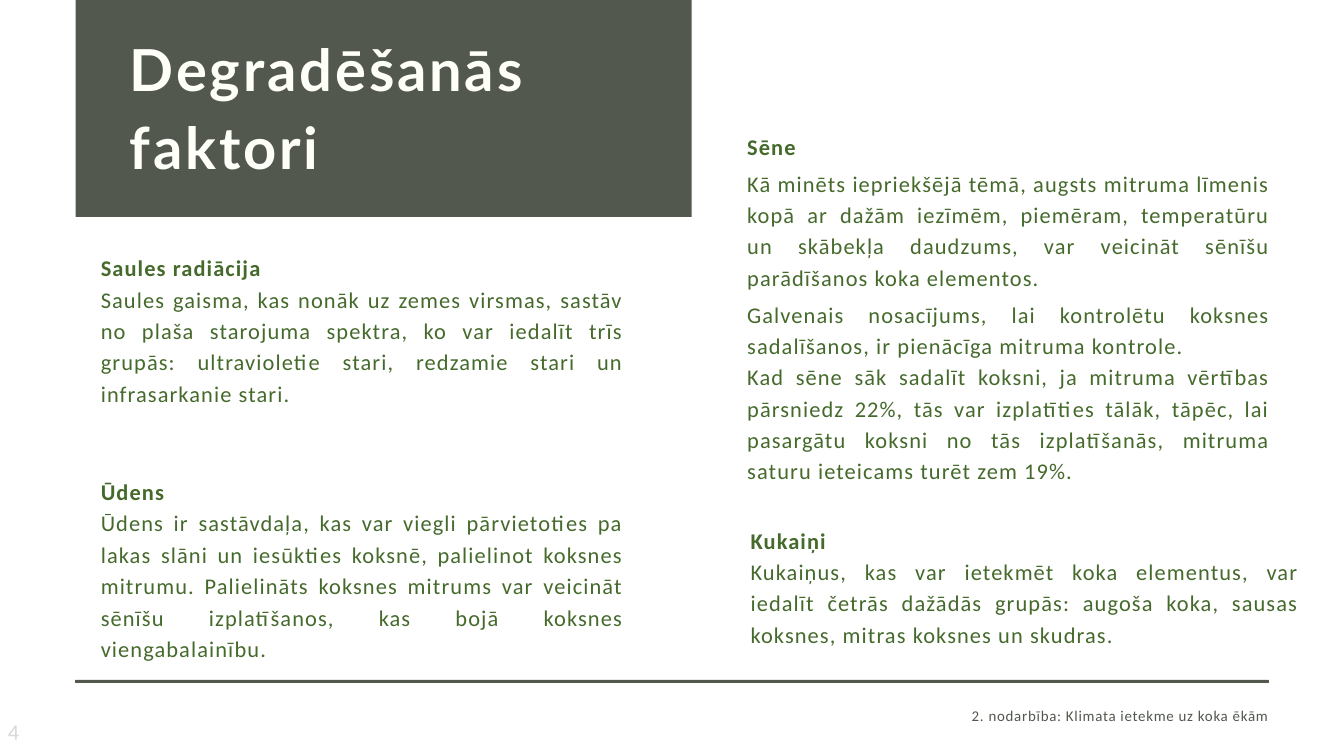
import pptx
import pptx.util
import pptx.dml.color
import pptx.enum.shapes
import pptx.enum.text

Pt = pptx.util.Pt
Align = pptx.enum.text.PP_ALIGN
Anchor = pptx.enum.text.MSO_ANCHOR

SLATE = "52584D"
GREEN = "456A2C"
CREAM = "FEFFF8"
PALE = "D9D9D9"


def color(code):
    return pptx.dml.color.RGBColor.from_string(code)


class Page:
    font = "Calibri"
    size = 24
    lead = 33.6

    def __init__(self, slide):
        self.slide = slide

    def bar(self, left, top, width, height, line=0):
        kind = pptx.enum.shapes.MSO_SHAPE.RECTANGLE
        bar = self.slide.shapes.add_shape(kind, Pt(left), Pt(top), Pt(width), Pt(height))
        bar.shadow.inherit = False
        bar.fill.solid()
        bar.fill.fore_color.rgb = color(SLATE)
        if line:
            bar.line.color.rgb = color(SLATE)
            bar.line.width = Pt(line)
        else:
            bar.line.fill.background()
        return bar

    def frame(self, shape, inset=0, anchor=Anchor.TOP):
        frame = shape.text_frame
        frame.word_wrap = True
        frame.auto_size = pptx.enum.text.MSO_AUTO_SIZE.NONE
        frame.vertical_anchor = anchor
        frame.margin_left = frame.margin_right = Pt(inset)
        frame.margin_top = frame.margin_bottom = Pt(inset / 2)
        return frame

    def box(self, left, top, width, height, inset=0, anchor=Anchor.TOP):
        box = self.slide.shapes.add_textbox(Pt(left), Pt(top), Pt(width), Pt(height))
        return self.frame(box, inset, anchor)

    def para(self, para, text, code, size=None, font=None, bold=False,
             align=Align.LEFT, lead=None, after=0):
        size = size or self.size
        para.alignment = align
        para.space_before = Pt(0)
        para.space_after = Pt(after)
        if lead:
            para.line_spacing = Pt(lead)
        run = para.add_run()
        run.text = text
        run.font.name = font or self.font
        run.font.size = Pt(size)
        run.font.bold = bold
        run.font.color.rgb = color(code)
        run._r.get_or_add_rPr().set("spc", str(round(size * 5)))

    def title(self, text, panel, left, top, width, height):
        title = self.slide.shapes.title
        title.left, title.top = Pt(left), Pt(top)
        title.width, title.height = Pt(width), Pt(height)
        panel.element.addnext(title.element)
        frame = self.frame(title)
        self.para(frame.paragraphs[0], text, CREAM, 62, "Lato", True, lead=83.7)

    def topic(self, left, top, width, height, head, texts, gaps=()):
        frame = self.box(left, top, width, height)
        gaps = list(gaps) + [0] * (len(texts) + 1 - len(gaps))
        self.para(frame.paragraphs[0], head, GREEN, bold=True, lead=self.lead, after=gaps[0])
        for text, gap in zip(texts, gaps[1:]):
            self.para(frame.add_paragraph(), text, GREEN, align=Align.JUSTIFY,
                      lead=self.lead, after=gap)


def main():
    deck = pptx.Presentation()
    deck.slide_width, deck.slide_height = Pt(1440), Pt(810)
    page = Page(deck.slides.add_slide(deck.slide_layouts[5]))

    page.topic(800.6, 137.5, 560, 422, "Sēne", [
        "Kā minēts iepriekšējā tēmā, augsts mitruma līmenis kopā ar dažām iezīmēm, "
        "piemēram, temperatūru un skābekļa daudzums, var veicināt sēnīšu parādīšanos "
        "koka elementos.",
        "Galvenais nosacījums, lai kontrolētu koksnes sadalīšanos, ir pienācīga "
        "mitruma kontrole.",
        "Kad sēne sāk sadalīt koksni, ja mitruma vērtības pārsniedz 22%, tās var "
        "izplatīties tālāk, tāpēc, lai pasargātu koksni no tās izplatīšanās, mitruma "
        "saturu ieteicams turēt zem 19%.",
    ], gaps=(6, 6))
    page.topic(804.2, 559.5, 587.5, 169, "Kukaiņi", [
        "Kukaiņus, kas var ietekmēt koka elementus, var iedalīt četrās dažādās "
        "grupās: augoša koka, sausas koksnes, mitras koksnes un skudras.",
    ])

    panel = page.bar(81, 0, 660, 232.5)
    page.title("Degradēšanās faktori", panel, 139, 26.6, 544, 167)
    page.bar(81, 728.6, 1278, 2.9, line=0.75)

    page.topic(108, 267.8, 560, 204, "Saules radiācija", [
        "Saules gaisma, kas nonāk uz zemes virsmas, sastāv no plaša starojuma "
        "spektra, ko var iedalīt trīs grupās: ultravioletie stari, redzamie stari "
        "un infrasarkanie stari.",
    ])
    page.topic(108, 507.6, 560, 238, "Ūdens", [
        "Ūdens ir sastāvdaļa, kas var viegli pārvietoties pa lakas slāni un "
        "iesūkties koksnē, palielinot koksnes mitrumu. Palielināts koksnes mitrums "
        "var veicināt sēnīšu izplatīšanos, kas bojā koksnes viengabalainību.",
    ])

    count = page.box(1.4, 769.7, 168, 28.8, inset=7.2, anchor=Anchor.MIDDLE)
    page.para(count.paragraphs[0], "4", PALE)
    foot = page.box(760.3, 753.8, 599, 43)
    page.para(foot.paragraphs[0], "2. nodarbība: Klimata ietekme uz koka ēkām", SLATE,
              size=16, align=Align.RIGHT, lead=22.4)

    deck.save("out.pptx")


if __name__ == "__main__":
    main()
